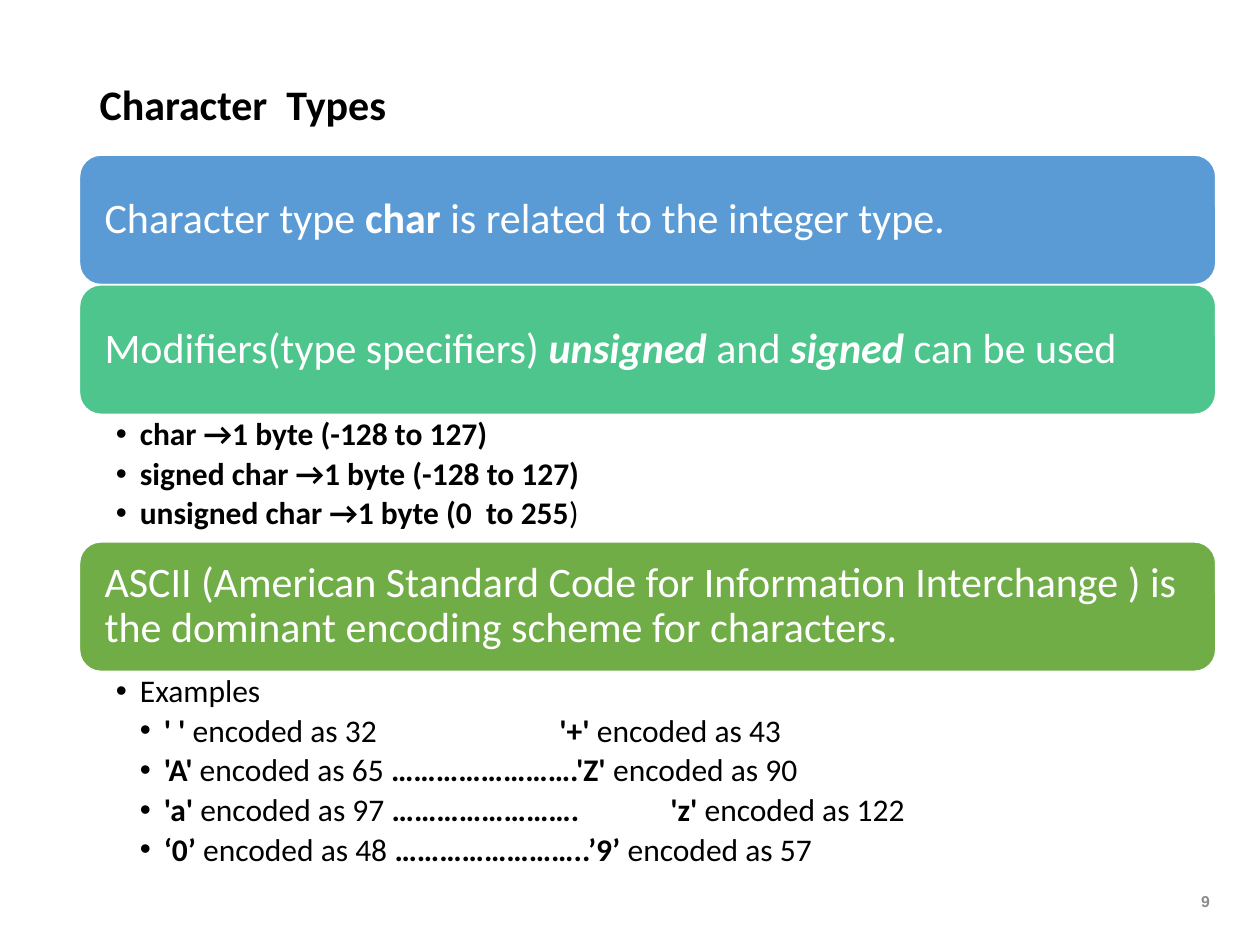
"""Build the slide on character types."""
from dataclasses import dataclass

from lxml.etree import SubElement
from pptx import Presentation
from pptx.dml.color import RGBColor
from pptx.enum.shapes import MSO_SHAPE
from pptx.enum.text import MSO_ANCHOR, PP_ALIGN
from pptx.oxml.ns import qn
from pptx.util import Inches, Pt

WHITE = RGBColor(0xFF, 0xFF, 0xFF)
BLACK = RGBColor(0x00, 0x00, 0x00)
GRAY = RGBColor(0x8C, 0x8C, 0x8C)
BLUE = RGBColor(0x5B, 0x9B, 0xD5)
TEAL = RGBColor(0x4D, 0xC5, 0x8D)
GREEN = RGBColor(0x70, 0xAD, 0x47)

WIDTH, HEIGHT = Inches(10), Inches(7.5)
CELL = WIDTH // 1000
LEFT, TOP, SPAN = 63, 123, 902
INDENT = 19
TAB = Inches(0.88)


@dataclass(frozen=True)
class Run:
    text: str
    bold: bool = False
    italic: bool = False


@dataclass(frozen=True)
class Band:
    runs: tuple[Run, ...]
    fill: RGBColor
    rows: int = 103


@dataclass(frozen=True)
class Item:
    runs: tuple[Run, ...]
    level: int = 1


@dataclass(frozen=True)
class Bullets:
    items: tuple[Item, ...]
    rows: int


def example(*texts: str) -> Item:
    """Return a second-level item whose runs alternate bold and regular."""
    return Item(tuple(Run(t, i % 2 == 0) for i, t in enumerate(texts)), 2)


BLOCKS = (
    Band((Run("Character type "), Run("char", True),
          Run(" is related to the integer type.")), BLUE),
    Band((Run("Modifiers(type specifiers) "), Run("unsigned ", True, True),
          Run("and "), Run("signed", True, True), Run(" can be used")), TEAL),
    Bullets((
        Item((Run("char →1 byte (-128 to 127)", True),)),
        Item((Run("signed char →1 byte (-128 to 127)", True),)),
        Item((Run("unsigned char →1 byte (0  to 255", True), Run(")"))),
    ), 101),
    Band((Run("ASCII (American Standard Code for Information Interchange ) is "
              "the dominant encoding scheme for characters."),), GREEN),
    Bullets((
        Item((Run("Examples"),)),
        example("' '", " encoded as 32\t\t", "'+'", " encoded as 43"),
        example("'A'", " encoded as 65 ", "…………………….'Z'", " encoded as 90"),
        example("'a'", " encoded as 97 ", "…………………….\t'z'", " encoded as 122"),
        example("‘0’ ", "encoded as 48 ", "……………………..’9’ ", "encoded as 57"),
    ), 166),
)


def place(sp, left: int, top: int, cols: int, rows: int) -> None:
    """Set a shape's box in grid cells."""
    sp.left, sp.top = left * CELL, top * CELL
    sp.width, sp.height = cols * CELL, rows * CELL


def set_frame(tf, anchor, left: int, top: int, right: int) -> None:
    """Set wrapping, anchor and margins, in grid cells."""
    tf.word_wrap = True
    tf.vertical_anchor = anchor
    tf.margin_left, tf.margin_right = left * CELL, right * CELL
    tf.margin_top = tf.margin_bottom = top * CELL


def add_runs(p, runs: tuple[Run, ...], size: int, color: RGBColor,
             font: str = "Calibri") -> None:
    """Append formatted runs to a paragraph."""
    for run in runs:
        r = p.add_run()
        r.text = run.text
        r.font.size, r.font.name = Pt(size), font
        r.font.bold, r.font.italic = run.bold, run.italic
        r.font.color.rgb = color


def add_band(slide, band: Band, top: int) -> None:
    """Draw a rounded band with its statement."""
    sp = slide.shapes.add_shape(MSO_SHAPE.ROUNDED_RECTANGLE, 0, 0, 0, 0)
    place(sp, LEFT, top, SPAN, band.rows)
    sp.shadow.inherit = False
    sp.fill.solid()
    sp.fill.fore_color.rgb = band.fill
    sp.line.color.rgb = WHITE
    sp.line.width = Pt(1)
    set_frame(sp.text_frame, MSO_ANCHOR.MIDDLE, 15, 15, 15)
    p = sp.text_frame.paragraphs[0]
    p.alignment, p.line_spacing = PP_ALIGN.LEFT, 0.9
    add_runs(p, band.runs, 24, WHITE)


def add_bullets(slide, block: Bullets, top: int) -> None:
    """Draw a bulleted list below a band."""
    sp = slide.shapes.add_textbox(0, 0, 0, 0)
    place(sp, LEFT, top, SPAN, block.rows)
    tf = sp.text_frame
    set_frame(tf, MSO_ANCHOR.TOP, 29, 3, 14)
    for i, item in enumerate(block.items):
        p = tf.add_paragraph() if i else tf.paragraphs[0]
        p.level, p.line_spacing, p.space_after = item.level, 0.9, Pt(3.2)
        ppr = p._p.get_or_add_pPr()
        ppr.set("marL", str(item.level * INDENT * CELL))
        ppr.set("indent", str(-INDENT * CELL))
        ppr.set("defTabSz", str(TAB))
        SubElement(ppr, qn("a:buFont")).set("typeface", "Arial")
        SubElement(ppr, qn("a:buChar")).set("char", "•")
        add_runs(p, item.runs, 18, BLACK)


def add_title(slide) -> None:
    """Fill and format the title placeholder."""
    sp = slide.shapes.title
    place(sp, 69, 50, 323, 58)
    set_frame(sp.text_frame, MSO_ANCHOR.BOTTOM, 10, 5, 10)
    p = sp.text_frame.paragraphs[0]
    p.alignment, p.line_spacing = PP_ALIGN.LEFT, 0.9
    add_runs(p, (Run("Character  Types", True),), 24, BLACK)


def add_page_number(slide) -> None:
    """Draw the page number at the lower right."""
    sp = slide.shapes.add_textbox(0, 0, 0, 0)
    place(sp, 931, 695, 39, 40)
    set_frame(sp.text_frame, MSO_ANCHOR.MIDDLE, 10, 5, 10)
    p = sp.text_frame.paragraphs[0]
    p.alignment, p.space_after = PP_ALIGN.RIGHT, Pt(6)
    add_runs(p, (Run("9", True),), 9, GRAY, "Arial")


def main() -> None:
    """Build and save the slide."""
    prs = Presentation()
    prs.slide_width, prs.slide_height = WIDTH, HEIGHT
    slide = prs.slides.add_slide(prs.slide_layouts[5])
    add_title(slide)
    add_page_number(slide)
    top = TOP
    for block in BLOCKS:
        if isinstance(block, Band):
            add_band(slide, block, top)
        else:
            add_bullets(slide, block, top)
        top += block.rows
    prs.save("out.pptx")


if __name__ == "__main__":
    main()
